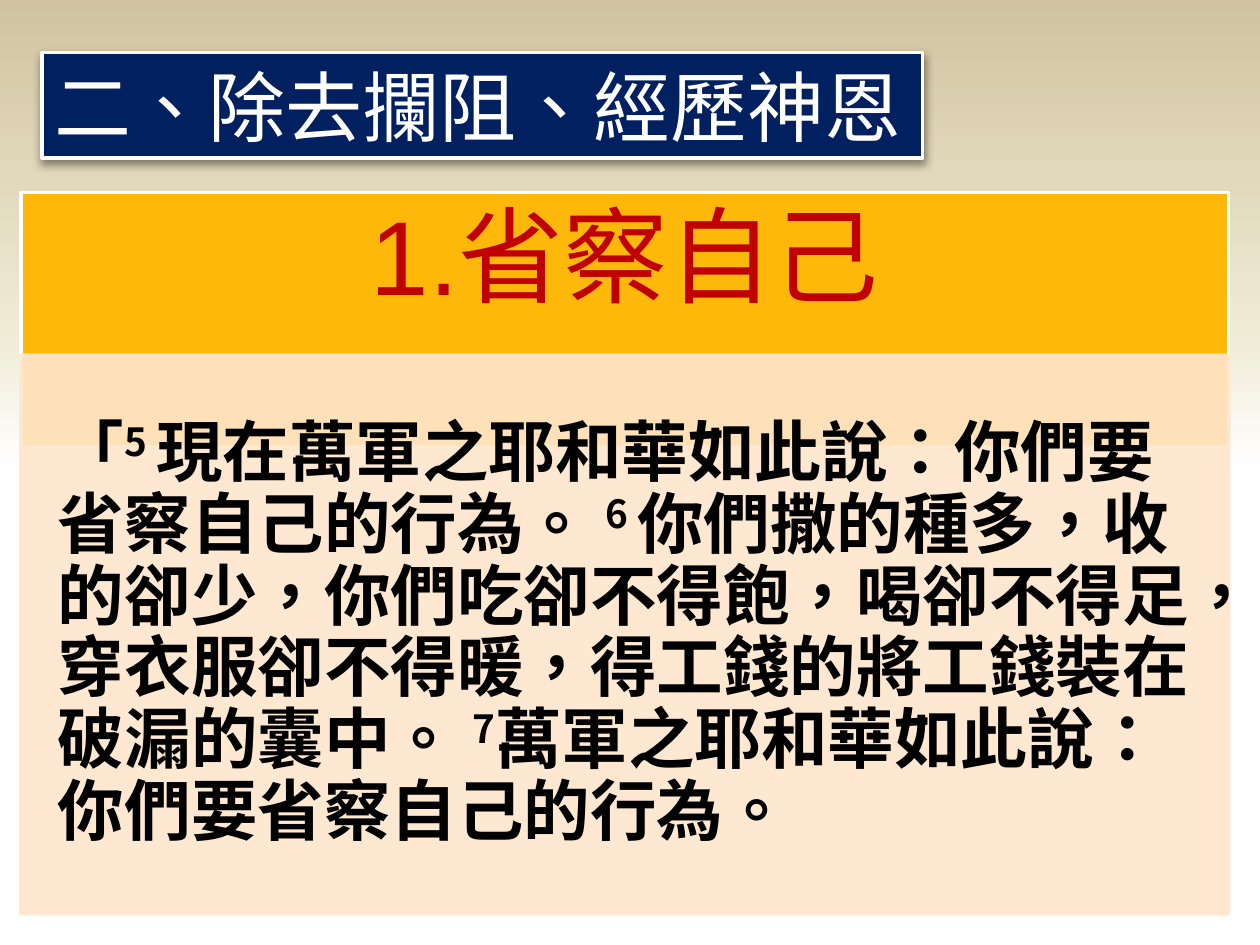
from copy import deepcopy

from lxml import etree
from pptx import Presentation
from pptx.dml.color import RGBColor
from pptx.enum.shapes import MSO_SHAPE
from pptx.enum.text import MSO_ANCHOR, MSO_AUTO_SIZE, PP_ALIGN
from pptx.oxml.ns import qn
from pptx.util import Cm, Pt

RECTANGLE = MSO_SHAPE.RECTANGLE
MIDDLE = MSO_ANCHOR.MIDDLE
LEFT, CENTER = PP_ALIGN.LEFT, PP_ALIGN.CENTER
GROW = MSO_AUTO_SIZE.SHAPE_TO_FIT_TEXT

COLORS = {
    "white": "FFFFFF", "cream": "F0EBD5", "sand": "D1C39F",
    "navy": "002060", "amber": "FEB80A", "peach": "FFE6CC",
    "red": "C00000", "black": "000000",
}
CJK_FONT = "Noto Sans CJK SC"


def rgb(name):
    return RGBColor.from_string(COLORS[name])


def write(para, text, *, size, color, font, bold=False, raised=False):
    """Add one formatted span to a paragraph."""
    span = para.add_run()
    span.text = text
    span.font.size = Pt(size)
    span.font.bold = bold
    span.font.color.rgb = rgb(color)
    span.font.name = font
    properties = span._r.get_or_add_rPr()
    properties.set("lang", "zh-TW")
    if raised:
        properties.set("baseline", "30000")
    etree.SubElement(properties, qn("a:ea"), typeface=CJK_FONT)


class SlideBuilder:
    """Holds the style and the current slide."""

    def __init__(self, page):
        self.page = page
        self.line_width = Pt(2)

    def background(self, stops, angle):
        fill = self.page.background.fill
        fill.gradient()
        fill.gradient_angle = angle
        stop_list = next(self.page.element.iter(qn("a:gsLst")))
        while len(stop_list) < len(stops):
            stop_list.append(deepcopy(stop_list[0]))
        for stop, (position, color) in zip(fill.gradient_stops, stops):
            stop.position = position
            stop.color.rgb = rgb(color)

    def panel(self, left, top, width, height, fill, line, opacity=100):
        box = self.page.shapes.add_shape(
            RECTANGLE, Cm(left), Cm(top), Cm(width), Cm(height))
        box.shadow.inherit = False
        box.fill.solid()
        box.fill.fore_color.rgb = rgb(fill)
        box.line.color.rgb = rgb(line)
        box.line.width = self.line_width
        if opacity < 100:
            for color in box.element.spPr.iter(qn("a:srgbClr")):
                etree.SubElement(color, qn("a:alpha"), val=str(opacity * 1000))
        return box

    def drop_shadow(self, box, blur, distance, opacity):
        effects = box.element.spPr.find(qn("a:effectLst"))
        shadow = etree.SubElement(
            effects, qn("a:outerShdw"), blurRad=str(Pt(blur)),
            dist=str(Pt(distance)), dir="5400000", rotWithShape="0")
        color = etree.SubElement(shadow, qn("a:srgbClr"), val=COLORS["black"])
        etree.SubElement(color, qn("a:alpha"), val=str(opacity * 1000))

    def text_box(self, left, top, width, height):
        return self.page.shapes.add_textbox(
            Cm(left), Cm(top), Cm(width), Cm(height))

    def text(self, box, spans, *, align=LEFT, spacing=1.0, wrap=True,
             insets=(0.25, 0.13), **style):
        frame = box.text_frame
        frame.word_wrap = wrap
        frame.vertical_anchor = MIDDLE
        frame.margin_left = frame.margin_right = Cm(insets[0])
        frame.margin_top = frame.margin_bottom = Cm(insets[1])
        para = frame.paragraphs[0]
        para.alignment = align
        para.line_spacing = spacing
        for text, raised in spans:
            write(para, text, raised=raised, **style)


def main():
    deck = Presentation()
    deck.slide_width, deck.slide_height = Cm(25.4), Cm(19.05)
    builder = SlideBuilder(deck.slides.add_slide(deck.slide_layouts[6]))
    builder.background(
        [(0.5, "white"), (0.65, "cream"), (1.0, "sand")], angle=90)

    # Section title
    title = builder.panel(0.85, 1.06, 17.75, 2.13, "navy", "white")
    builder.drop_shadow(title, blur=5, distance=2, opacity=43)
    builder.text(title, [("二、除去攔阻、經歷神恩", False)], wrap=False,
                 size=44, color="white", font="Cabin")
    title.text_frame.auto_size = GROW

    # Heading band
    left, width = 0.42, 24.35
    builder.panel(left, 3.88, width, 5.13, "amber", "white")
    heading = builder.text_box(left, 3.88, width, 2.77)
    builder.text(heading, [("1.省察自己", False)], align=CENTER, spacing=0.9,
                 insets=(1.19, 1.19), size=60, color="red", font="Arial")

    # Scripture passage with raised verse numbers
    passage_area = (left, 7.16, width, 11.26)
    builder.panel(*passage_area, "peach", "peach", opacity=90)
    verses = [
        ("「", False),
        ("5\N{NO-BREAK SPACE}", True),
        ("現在萬軍之耶和華如此說：你們要省察自己的行為。 ", False),
        ("6\N{NO-BREAK SPACE}", True),
        ("你們撒的種多，收的卻少，你們吃卻不得飽，喝卻不得足，"
         "穿衣服卻不得暖，得工錢的將工錢裝在破漏的囊中。\N{NO-BREAK SPACE}", False),
        ("7", True),
        ("萬軍之耶和華如此說：你們要省察自己的行為。", False),
    ]
    builder.text(builder.text_box(*passage_area), verses, spacing=0.9,
                 insets=(0.75, 0.13), size=38, color="black", font=CJK_FONT,
                 bold=True)

    deck.save("out.pptx")


if __name__ == "__main__":
    main()
